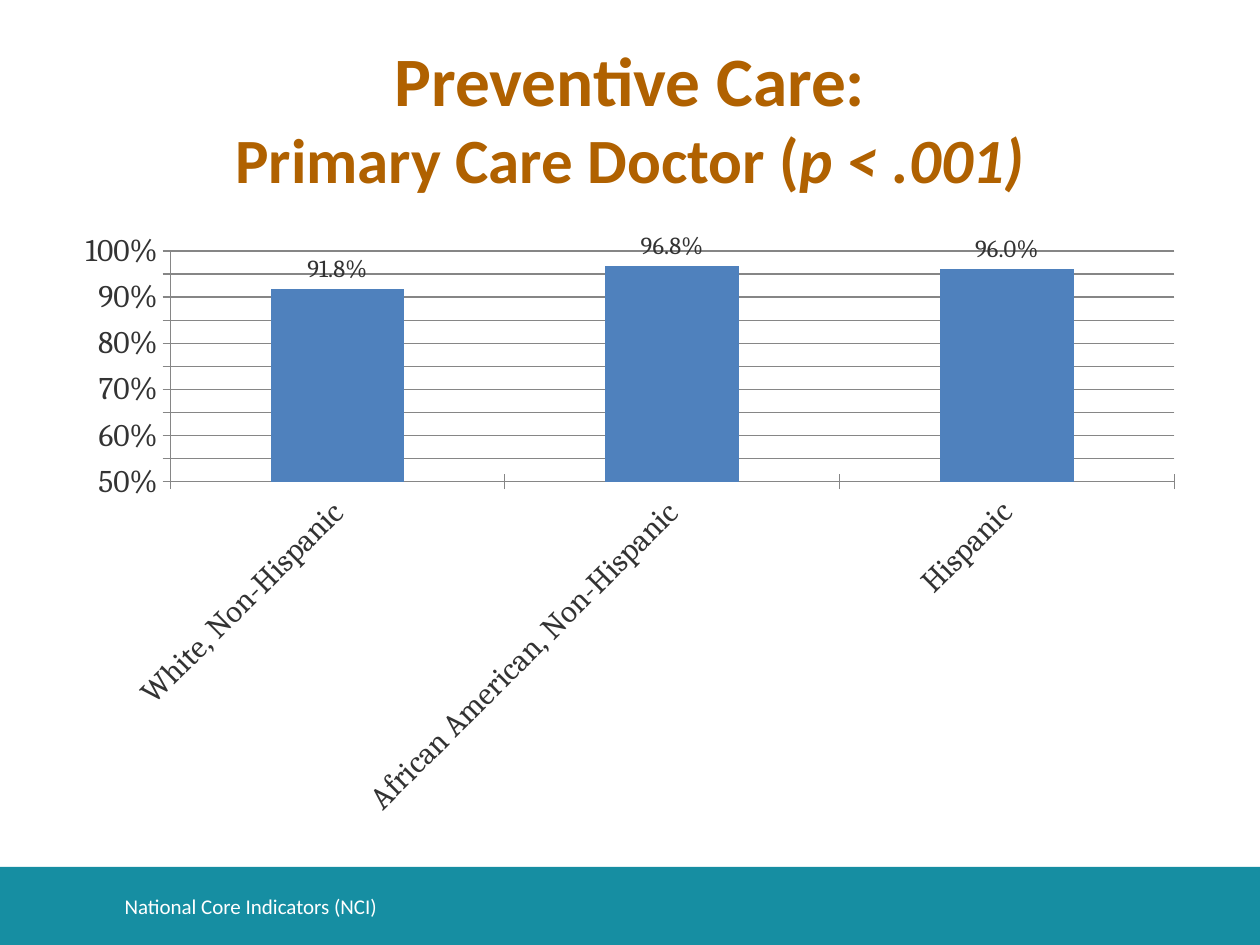
from pptx import Presentation
from pptx.chart.data import CategoryChartData
from pptx.dml.color import RGBColor
from pptx.enum.chart import XL_CHART_TYPE, XL_LABEL_POSITION, XL_TICK_MARK
from pptx.enum.shapes import MSO_SHAPE
from pptx.enum.text import MSO_ANCHOR, PP_ALIGN
from pptx.util import Inches, Pt

COLORS = {name: RGBColor.from_string(value) for name, value in {
    "band": "168EA2",
    "heading": "B06100",
    "footer": "FFFFFF",
    "chart_text": "333333",
    "bar": "4F81BD",
    "grid": "868686",
}.items()}


def add_text(paragraph, text, size, color, bold=False, italic=False):
    run = paragraph.add_run()
    run.text = text
    run.font.name = "Calibri"
    run.font.size = Pt(size)
    run.font.bold = bold
    run.font.italic = italic
    run.font.color.rgb = COLORS[color]


deck = Presentation()
deck.slide_width, deck.slide_height = Inches(10), Inches(7.5)
slide = deck.slides.add_slide(deck.slide_layouts[5])

band = slide.shapes.add_shape(
    MSO_SHAPE.RECTANGLE, Inches(0), Inches(6.88), Inches(10), Inches(0.62))
band.shadow.inherit = False
band.fill.solid()
band.fill.fore_color.rgb = COLORS["band"]
band.line.fill.background()

heading = slide.shapes.title
heading.left, heading.top = Inches(0.5), Inches(0.3)
heading.width, heading.height = Inches(9), Inches(1.25)
heading.text_frame.vertical_anchor = MSO_ANCHOR.MIDDLE
heading_lines = heading.text_frame.paragraphs[0]
heading_lines.alignment = PP_ALIGN.CENTER
add_text(heading_lines, "Preventive Care:", size=39.6, color="heading", bold=True)
heading_lines.add_line_break()
add_text(heading_lines, "Primary Care Doctor (", size=36, color="heading", bold=True)
add_text(heading_lines, "p < .001)", size=36, color="heading", bold=True, italic=True)

footer = slide.shapes.add_textbox(
    Inches(0.89), Inches(6.99), Inches(7.4), Inches(0.4)).text_frame
footer.word_wrap = True
footer.vertical_anchor = MSO_ANCHOR.MIDDLE
add_text(footer.paragraphs[0], "National Core Indicators (NCI)", size=12, color="footer")

doctor_rates = CategoryChartData(number_format="0.0%")
doctor_rates.categories = ["White, Non-Hispanic", "African American, Non-Hispanic", "Hispanic"]
doctor_rates.add_series("Series 1", [0.918, 0.968, 0.96])
chart = slide.shapes.add_chart(
    XL_CHART_TYPE.COLUMN_CLUSTERED, Inches(0.5), Inches(1.75),
    Inches(9), Inches(4.83), doctor_rates).chart
chart.has_title = False
chart.has_legend = False
chart.font.name = "Cambria"
chart.font.size = Pt(18)
chart.font.color.rgb = COLORS["chart_text"]

groups, rates = chart.category_axis, chart.value_axis
for axis in (groups, rates):
    axis.major_tick_mark = XL_TICK_MARK.CROSS
    axis.format.line.color.rgb = COLORS["grid"]
    axis.format.line.width = Pt(0.75)
    axis.tick_labels.font.name = "Cambria"
    axis.tick_labels.font.size = Pt(18)
    axis.tick_labels.font.color.rgb = COLORS["chart_text"]
groups._element.txPr.bodyPr.set("rot", "-2700000")
rates.minimum_scale, rates.maximum_scale, rates.major_unit = 0.5, 1, 0.05
rates.tick_labels.number_format = "0%"
rates.tick_labels.number_format_is_linked = False
rates.has_major_gridlines = True
rates.major_gridlines.format.line.color.rgb = COLORS["grid"]
rates.major_gridlines.format.line.width = Pt(0.75)

plot = chart.plots[0]
plot.gap_width = 150
plot.vary_by_categories = False
bars = plot.series[0]
bars.format.fill.solid()
bars.format.fill.fore_color.rgb = COLORS["bar"]
labels = bars.data_labels
labels.show_value = True
labels.number_format = "0.0%"
labels.number_format_is_linked = False
labels.position = XL_LABEL_POSITION.OUTSIDE_END
labels.font.name = "Cambria"
labels.font.size = Pt(14)
labels.font.color.rgb = COLORS["chart_text"]

deck.save("out.pptx")
